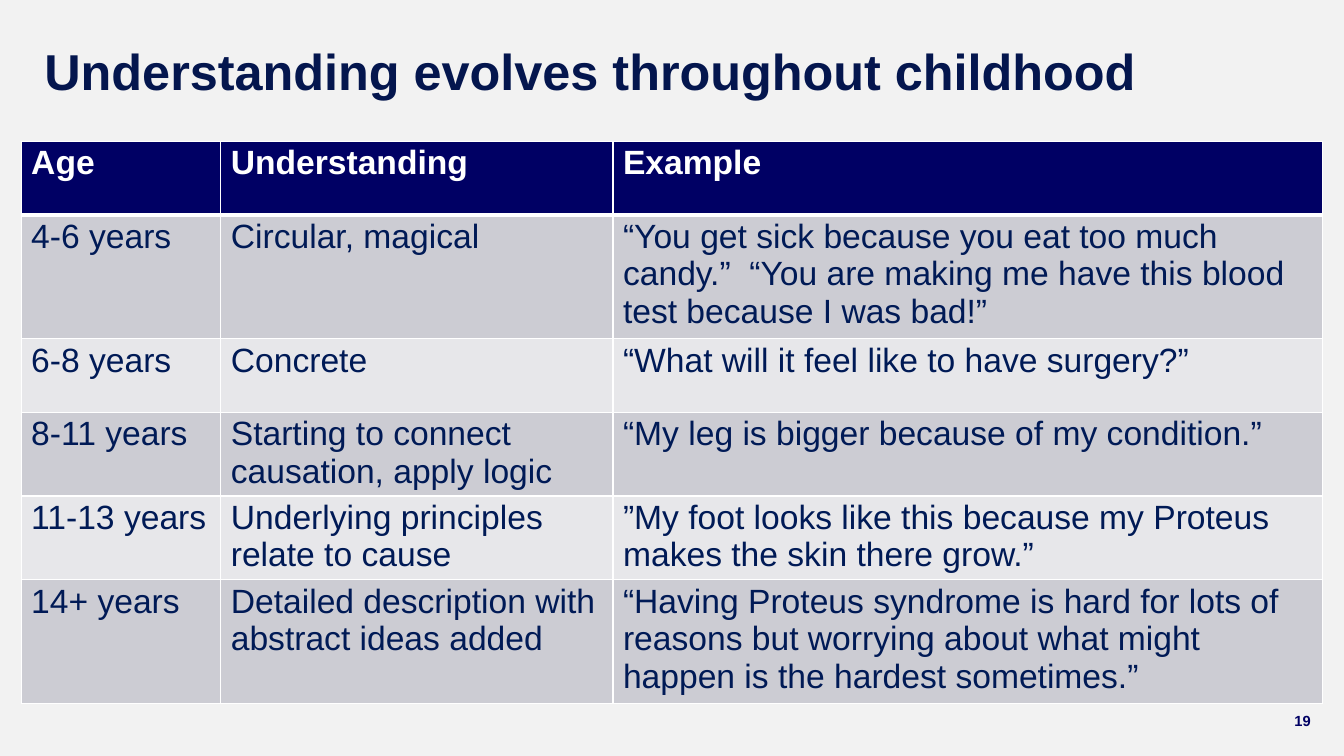
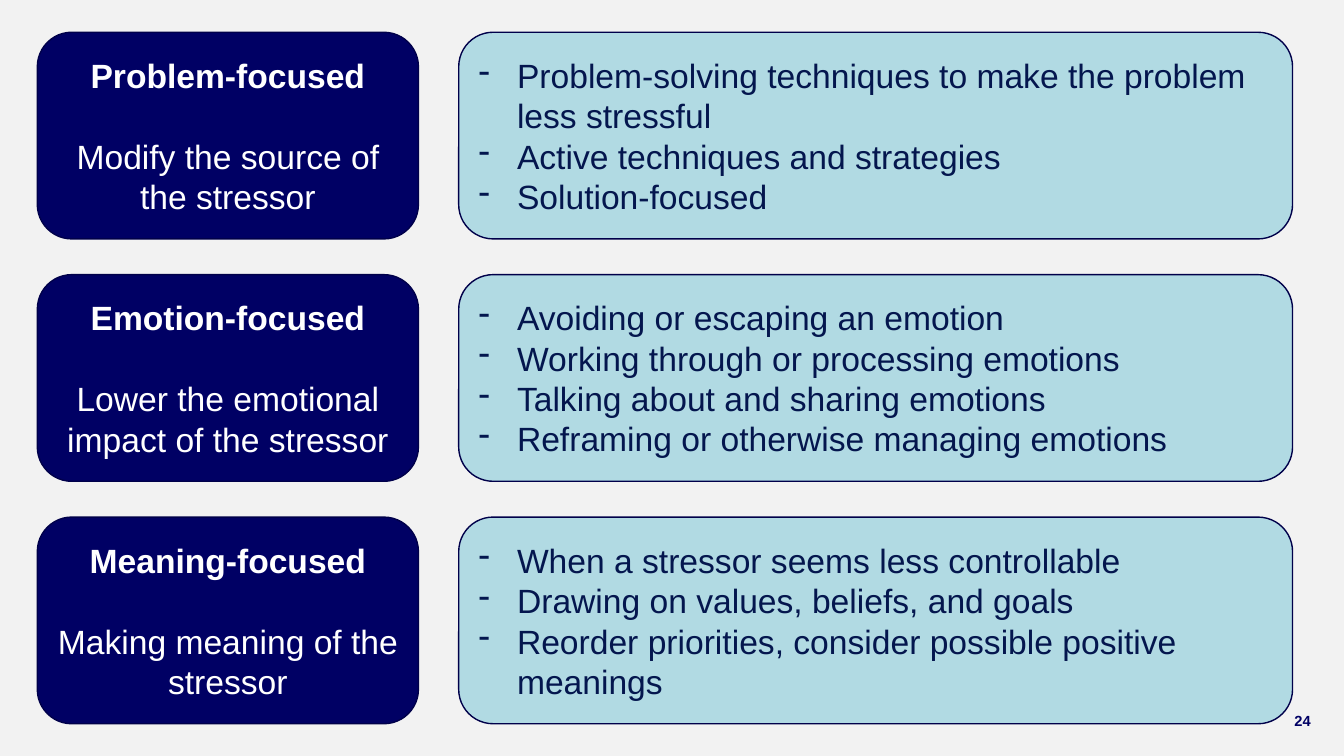
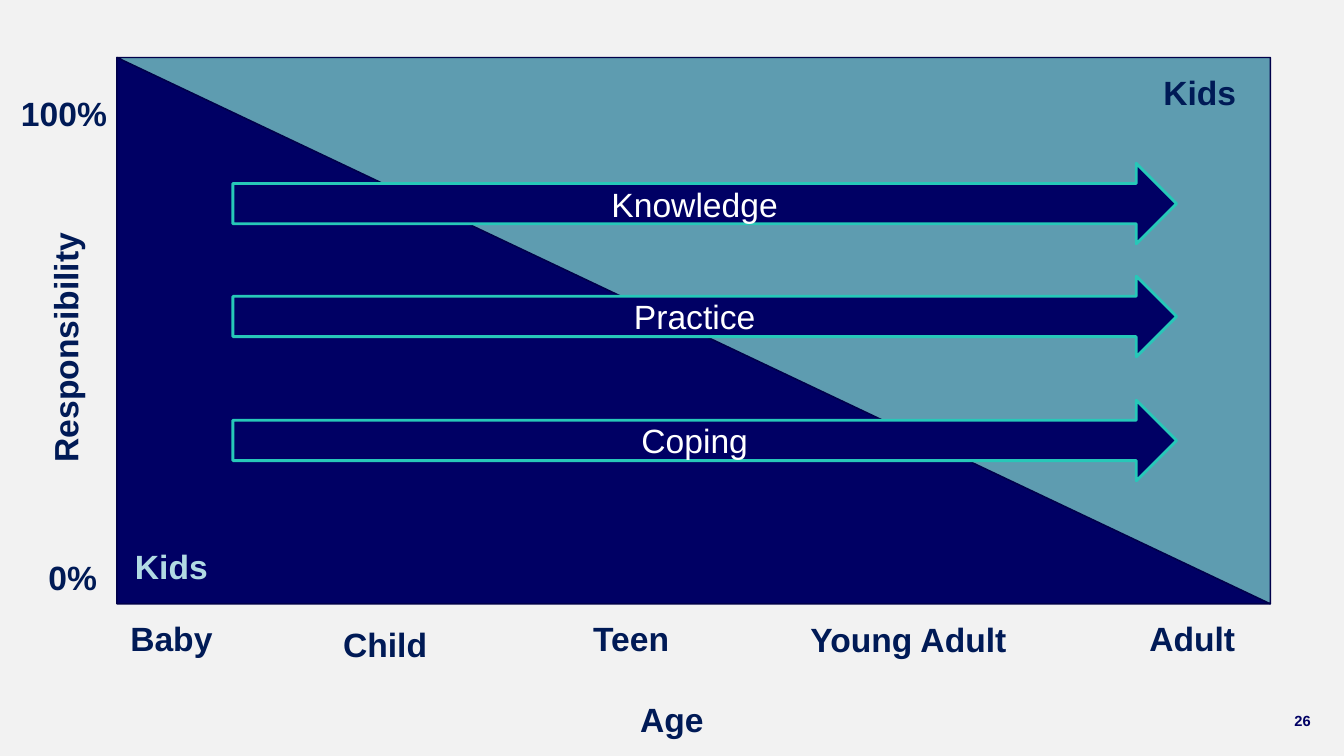
"""Builds three slides on childhood understanding, coping styles and responsibility."""
from dataclasses import dataclass

from lxml.etree import SubElement
from pptx import Presentation
from pptx.dml.color import RGBColor
from pptx.enum.shapes import MSO_SHAPE
from pptx.enum.text import MSO_ANCHOR, PP_ALIGN
from pptx.oxml import parse_xml
from pptx.oxml.ns import nsdecls, qn
from pptx.util import Inches, Pt

COLORS = {
    "background": "F2F2F2",
    "navy": "000064",
    "outline": "00004A",
    "title": "04164E",
    "text": "001A56",
    "white": "FFFFFF",
    "pale": "B1DAE3",
    "teal": "5E9CB0",
    "mint": "27C8B8",
    "dark_band": "CCCCD3",
    "light_band": "E7E7EA",
}
FONT = "Arial"
BODY_SIZE = 24


@dataclass(frozen=True)
class Box:
    left: float
    top: float
    width: float
    height: float = 0.5

    def lengths(self) -> tuple:
        return tuple(Inches(v) for v in (self.left, self.top, self.width, self.height))


@dataclass(frozen=True)
class Label:
    text: str
    box: Box
    color: str = "text"
    align: PP_ALIGN = PP_ALIGN.CENTER
    rotation: int = 0


@dataclass(frozen=True)
class Strategy:
    name: str
    aim: str
    examples: tuple[str, ...]


@dataclass(frozen=True)
class Skill:
    name: str
    top: float


UNDERSTANDING = (
    ("Age", "Understanding", "Example"),
    ("4-6 years", "Circular, magical",
     "“You get sick because you eat too much candy.”  “You are making me have "
     "this blood test because I was bad!”"),
    ("6-8 years", "Concrete", "“What will it feel like to have surgery?”"),
    ("8-11 years", "Starting to connect causation, apply logic",
     "“My leg is bigger because of my condition.”"),
    ("11-13 years", "Underlying principles relate to cause",
     "”My foot looks like this because my Proteus makes the skin there grow.”"),
    ("14+ years", "Detailed description with abstract ideas added",
     "“Having Proteus syndrome is hard for lots of reasons but worrying about "
     "what might happen is the hardest sometimes.”"),
)
COLUMN_WIDTHS = (1.98, 3.89, 7.04)
ROW_HEIGHT = 0.73

STRATEGIES = (
    Strategy("Problem-focused", "Modify the source of the stressor", (
        "Problem-solving techniques to make the problem less stressful",
        "Active techniques and strategies",
        "Solution-focused")),
    Strategy("Emotion-focused", "Lower the emotional impact of the stressor", (
        "Avoiding or escaping an emotion",
        "Working through or processing emotions",
        "Talking about and sharing emotions",
        "Reframing or otherwise managing emotions")),
    Strategy("Meaning-focused", "Making meaning of the stressor", (
        "When a stressor seems less controllable",
        "Drawing on values, beliefs, and goals",
        "Reorder priorities, consider possible positive meanings")),
)

RESPONSIBILITY_AREA = Box(1.16, 0.57, 11.44, 5.42)
LABELS = (
    Label("Responsibility", Box(-1.2, 3.2, 3.69), rotation=270),
    Label("Age", Box(6.25, 6.88, 1.24), align=PP_ALIGN.LEFT),
    Label("0%", Box(0.23, 5.48, 0.83), align=PP_ALIGN.RIGHT),
    Label("100%", Box(0.11, 0.87, 1.24), align=PP_ALIGN.LEFT),
    Label("Baby", Box(1, 6.08, 1.4)),
    Label("Child", Box(3.12, 6.14, 1.4)),
    Label("Teen", Box(5.56, 6.08, 1.4)),
    Label("Young Adult", Box(7.53, 6.09, 2.96)),
    Label("Adult", Box(10.91, 6.08, 1.83)),
    Label("Kids", Box(11.2, 0.66, 1.4)),
    Label("Kids", Box(1, 5.37, 1.4), color="pale"),
)
SKILLS = (Skill("Knowledge", 1.62), Skill("Practice", 2.74), Skill("Coping", 3.97))


def rgb(color: str) -> RGBColor:
    return RGBColor.from_string(COLORS[color])


def write(paragraph, text: str, color: str, size: float = BODY_SIZE,
          bold: bool = False, align: PP_ALIGN = PP_ALIGN.LEFT) -> None:
    paragraph.text = text
    paragraph.alignment = align
    font = paragraph.font
    font.name, font.size, font.bold = FONT, Pt(size), bold
    font.color.rgb = rgb(color)


def add_text(slide, label: Label, size: float = BODY_SIZE,
             anchor: MSO_ANCHOR = MSO_ANCHOR.TOP):
    textbox = slide.shapes.add_textbox(*label.box.lengths())
    textbox.rotation = label.rotation
    frame = textbox.text_frame
    frame.word_wrap = True
    frame.vertical_anchor = anchor
    write(frame.paragraphs[0], label.text, label.color, size, True, label.align)
    return frame


def add_panel(slide, preset: MSO_SHAPE, box: Box, fill: str,
              line: str = "outline", line_width: float = 1):
    panel = slide.shapes.add_shape(preset, *box.lengths())
    panel.shadow.inherit = False
    panel.fill.solid()
    panel.fill.fore_color.rgb = rgb(fill)
    panel.line.color.rgb = rgb(line)
    panel.line.width = Pt(line_width)
    panel.text_frame.word_wrap = True
    panel.text_frame.vertical_anchor = MSO_ANCHOR.MIDDLE
    return panel


def add_dash(paragraph) -> None:
    properties = paragraph._p.get_or_add_pPr()
    properties.set("marL", str(Inches(0.38)))
    properties.set("indent", str(-Inches(0.38)))
    SubElement(properties, qn("a:buChar")).set("char", "-")


def set_borders(cell, bottom_width: float) -> None:
    properties = cell._tc.get_or_add_tcPr()
    widths = {"lnL": 1, "lnR": 1, "lnT": 1, "lnB": bottom_width}
    for index, (side, width) in enumerate(widths.items()):
        properties.insert(index, parse_xml(
            f'<a:{side} {nsdecls("a")} w="{Pt(width)}"><a:solidFill>'
            f'<a:srgbClr val="{COLORS["white"]}"/></a:solidFill></a:{side}>'))


def add_slide(deck, number: int):
    slide = deck.slides.add_slide(deck.slide_layouts[6])
    slide.background.fill.solid()
    slide.background.fill.fore_color.rgb = rgb("background")
    page = Label(str(number), Box(12.74, 6.95, 0.38, 0.4), "navy", PP_ALIGN.LEFT)
    add_text(slide, page, 10.5, MSO_ANCHOR.MIDDLE)
    return slide


def build_understanding(deck) -> None:
    slide = add_slide(deck, 19)
    title = Label("Understanding evolves throughout childhood",
                  Box(0.44, 0, 12.07, 1.48), "title", PP_ALIGN.LEFT)
    frame = add_text(slide, title, 36, MSO_ANCHOR.MIDDLE)
    frame.margin_left = 0
    frame.paragraphs[0].line_spacing = 0.9

    row_count = len(UNDERSTANDING)
    area = Box(0.21, 1.4, sum(COLUMN_WIDTHS), ROW_HEIGHT * row_count)
    table = slide.shapes.add_table(row_count, len(COLUMN_WIDTHS), *area.lengths()).table
    for column, width in zip(table.columns, COLUMN_WIDTHS):
        column.width = Inches(width)
    for row, texts in enumerate(UNDERSTANDING):
        header = row == 0
        band = "navy" if header else "dark_band" if row % 2 else "light_band"
        for cell, text in zip(table.rows[row].cells, texts):
            cell.margin_top, cell.margin_bottom = Inches(0.03), Inches(0)
            cell.fill.solid()
            cell.fill.fore_color.rgb = rgb(band)
            set_borders(cell, 3 if header else 1)
            write(cell.text_frame.paragraphs[0], text,
                  "white" if header else "text", bold=header)


def build_coping(deck) -> None:
    slide = add_slide(deck, 24)
    for row, strategy in enumerate(STRATEGIES):
        top = 0.32 + row * 2.405
        focus = add_panel(slide, MSO_SHAPE.ROUNDED_RECTANGLE,
                          Box(0.37, top, 3.78, 2.05), "navy").text_frame
        name, aim = focus.paragraphs[0], focus.add_paragraph()
        write(name, strategy.name, "white", bold=True, align=PP_ALIGN.CENTER)
        write(aim, strategy.aim, "white", align=PP_ALIGN.CENTER)
        aim.space_before = Pt(29)

        examples = add_panel(slide, MSO_SHAPE.ROUNDED_RECTANGLE,
                             Box(4.55, top, 8.27, 2.05), "pale").text_frame
        for index, text in enumerate(strategy.examples):
            example = examples.add_paragraph() if index else examples.paragraphs[0]
            add_dash(example)
            write(example, text, "title")


def build_responsibility(deck) -> None:
    slide = add_slide(deck, 26)
    for fill, rotation in (("navy", 0), ("teal", 180)):
        half = add_panel(slide, MSO_SHAPE.RIGHT_TRIANGLE, RESPONSIBILITY_AREA, fill)
        half.rotation = rotation
    for label in LABELS:
        add_text(slide, label)
    for skill in SKILLS:
        arrow = add_panel(slide, MSO_SHAPE.RIGHT_ARROW,
                          Box(2.31, skill.top, 9.36, 0.8), "navy", "mint", 2)
        write(arrow.text_frame.paragraphs[0], skill.name, "white",
              align=PP_ALIGN.CENTER)


def main() -> None:
    deck = Presentation()
    deck.slide_width, deck.slide_height = Inches(13.33), Inches(7.5)
    build_understanding(deck)
    build_coping(deck)
    build_responsibility(deck)
    deck.save("out.pptx")


if __name__ == "__main__":
    main()
